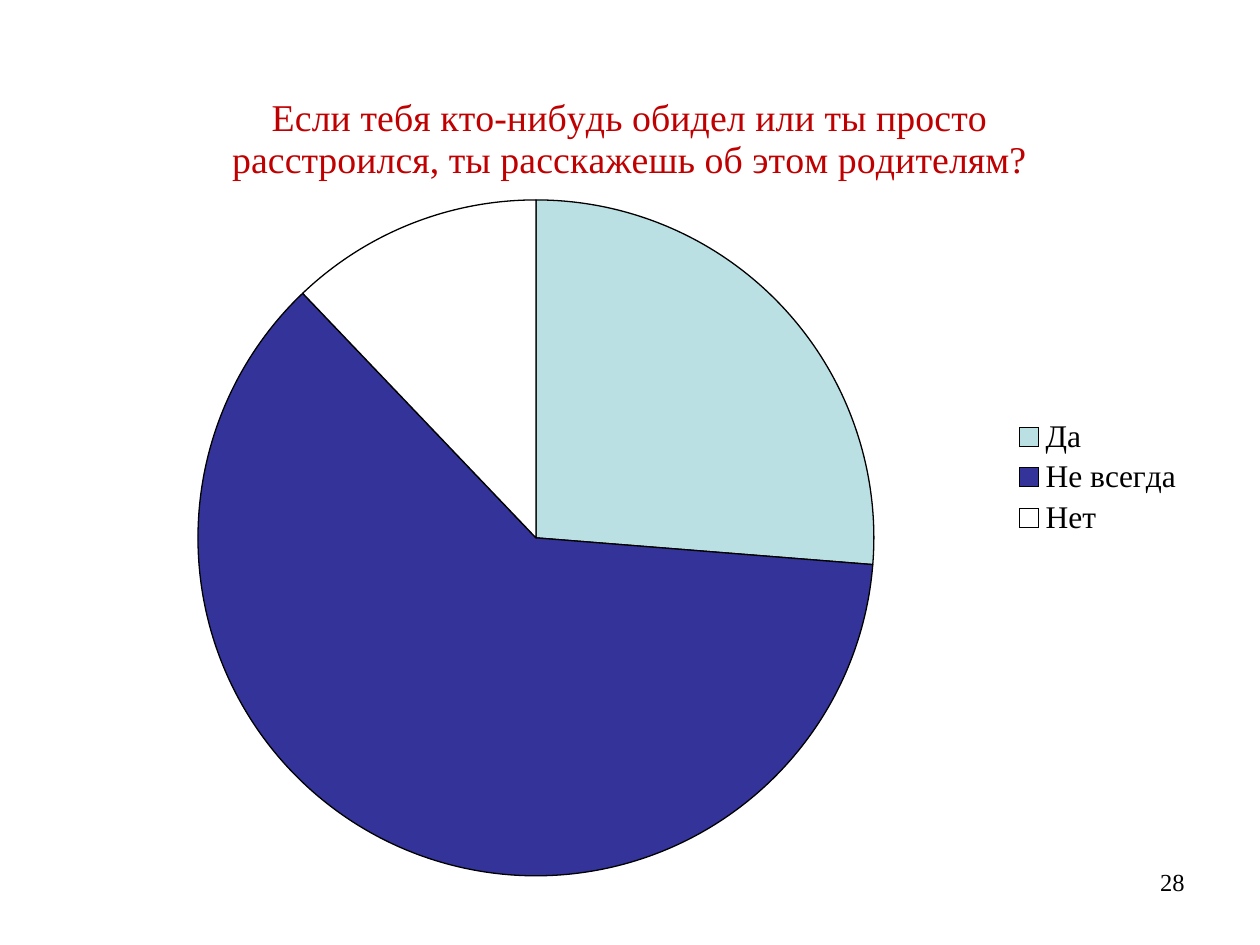
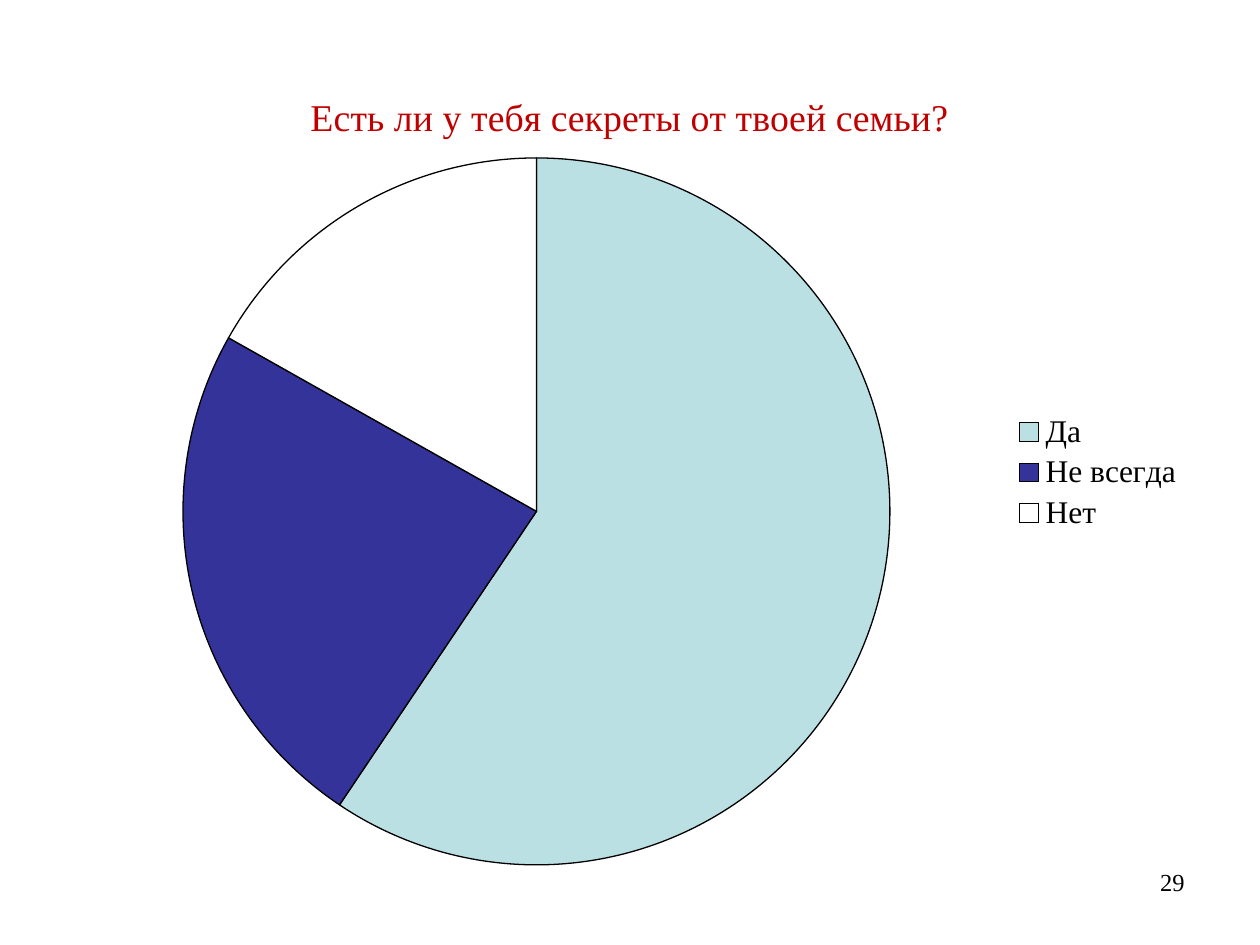
from lxml import etree
from pptx import Presentation
from pptx.chart.data import CategoryChartData
from pptx.dml.color import RGBColor
from pptx.enum.chart import XL_CHART_TYPE, XL_LEGEND_POSITION
from pptx.enum.text import PP_ALIGN
from pptx.oxml.ns import qn
from pptx.util import Emu, Pt

PIE = XL_CHART_TYPE.PIE
LEGEND_RIGHT = XL_LEGEND_POSITION.RIGHT
RIGHT = PP_ALIGN.RIGHT

PX = 914400 // 126
FONT = "Times New Roman"
COLOURS = {"title": "C00000", "text": "000000", "outline": "000000",
           "Да": "BBE0E3", "Не всегда": "333399", "Нет": "FFFFFF"}
ANSWERS = ["Да", "Не всегда", "Нет"]
SLIDE_SIZE = (1260, 945)
CHART_LEFT, CHART_TOP, CHART_WIDTH = 63, 63, 1134
NUMBER_BOX = (903, 861, 294, 65)
QUESTIONS = [
    {"title": "Если тебя кто-нибудь обидел или ты просто расстроился, "
              "ты расскажешь об этом родителям?",
     "values": [26, 61, 12], "number": "28",
     "height": 829, "pie": (198, 200, 676)},
    {"title": "Есть ли у тебя секреты от твоей семьи?",
     "values": [60, 24, 17], "number": "29",
     "height": 819, "pie": (183, 158, 707)},
]


def px(*lengths):
    return [Emu(length * PX) for length in lengths]


def colour(name):
    return RGBColor.from_string(COLOURS[name])


def style_font(font, size, name):
    font.name = FONT
    font.size = Pt(size)
    font.bold = False
    font.color.rgb = colour(name)


def place_pie(chart, pie, height):
    left, top, diameter = pie
    plot_area = chart.plots[0]._element.getparent()
    for old in plot_area.findall(qn("c:layout")):
        plot_area.remove(old)
    layout = etree.Element(qn("c:layout"))
    plot_area.insert(0, layout)
    manual = etree.SubElement(layout, qn("c:manualLayout"))
    settings = {"layoutTarget": "inner", "xMode": "edge", "yMode": "edge",
                "x": (left - CHART_LEFT) / CHART_WIDTH,
                "y": (top - CHART_TOP) / height,
                "w": diameter / CHART_WIDTH, "h": diameter / height}
    for tag, value in settings.items():
        etree.SubElement(manual, qn(f"c:{tag}"), val=str(value))


def add_pie(slide, question):
    data = CategoryChartData()
    data.categories = ANSWERS
    data.add_series("Series 1", question["values"])
    height = question["height"]
    frame = px(CHART_LEFT, CHART_TOP, CHART_WIDTH, height)
    chart = slide.shapes.add_chart(PIE, *frame, data).chart
    style_font(chart.font, 18, "text")

    chart.has_title = True
    heading = chart.chart_title.text_frame
    heading.text = question["title"]
    style_font(heading.paragraphs[0].font, 21.6, "title")
    chart.chart_title.include_in_layout = False

    chart.has_legend = True
    chart.legend.position = LEGEND_RIGHT
    chart.legend.include_in_layout = False

    plot = chart.plots[0]
    plot.vary_by_categories = True
    for index, answer in enumerate(ANSWERS):
        piece = plot.series[0].points[index].format
        piece.fill.solid()
        piece.fill.fore_color.rgb = colour(answer)
        piece.line.color.rgb = colour("outline")
        piece.line.width = Pt(0.75)
    place_pie(chart, question["pie"], height)


def add_number(slide, number):
    frame = slide.shapes.add_textbox(*px(*NUMBER_BOX)).text_frame
    frame.word_wrap = True
    para = frame.paragraphs[0]
    para.text = number
    para.alignment = RIGHT
    style_font(para.font, 14, "text")


def main():
    """Build the two survey slides, each with one pie chart."""
    deck = Presentation()
    deck.slide_width, deck.slide_height = px(*SLIDE_SIZE)
    blank = deck.slide_layouts.get_by_name("Blank")
    for question in QUESTIONS:
        slide = deck.slides.add_slide(blank)
        add_pie(slide, question)
        add_number(slide, question["number"])
    deck.save("out.pptx")


if __name__ == "__main__":
    main()
